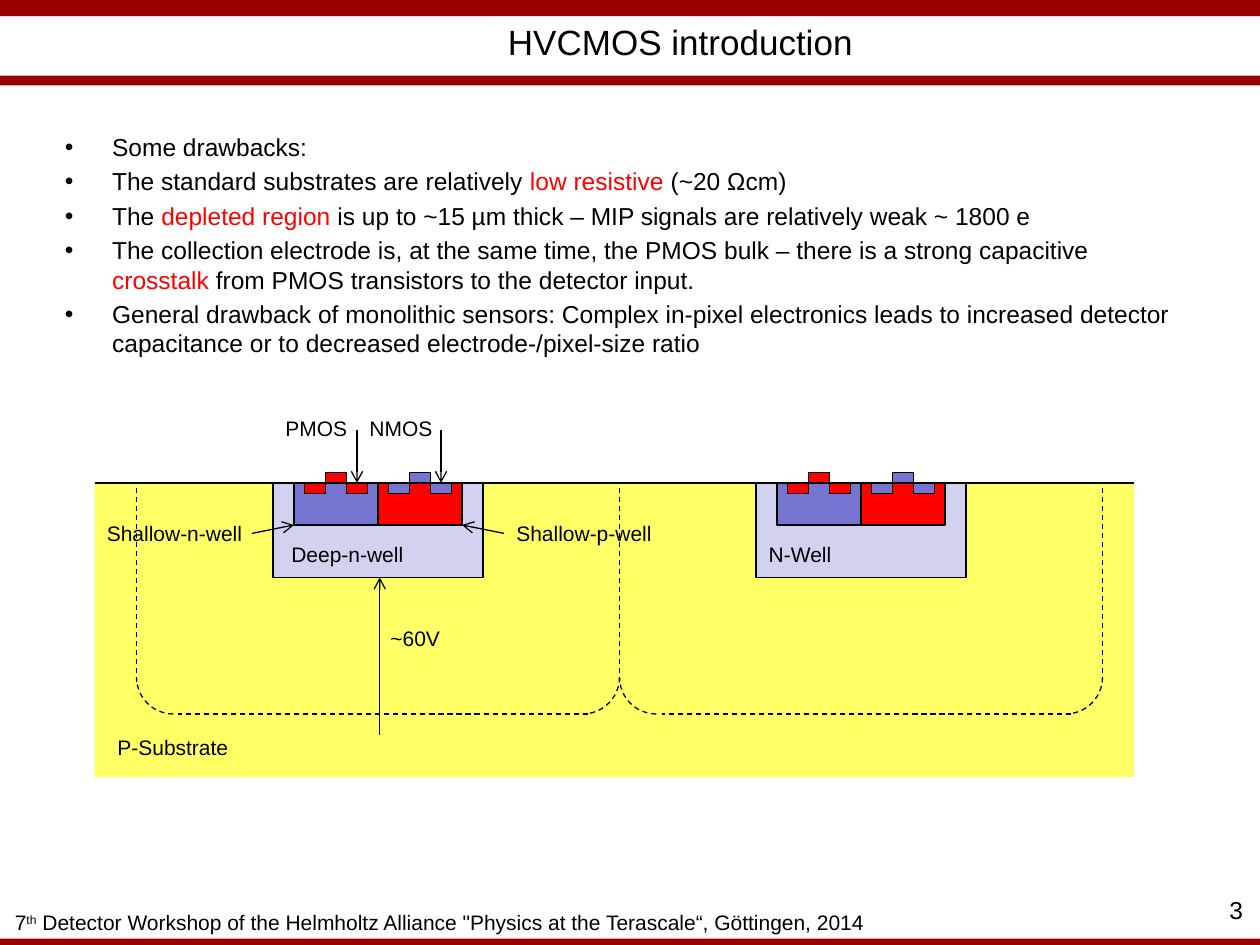
import pptx
import pptx.dml.color
import pptx.enum.dml
import pptx.enum.shapes
import pptx.enum.text
import pptx.oxml
import pptx.util

Pt = pptx.util.Pt
SHAPE = pptx.enum.shapes.MSO_SHAPE
ALIGN = pptx.enum.text.PP_ALIGN
ANCHOR = pptx.enum.text.MSO_ANCHOR
DASH = pptx.enum.dml.MSO_LINE.DASH
A = "http://schemas.openxmlformats.org/drawingml/2006/main"
COLORS = {
    "bar": "990000", "substrate": "FFFF66", "well": "D1D1F0",
    "n": "7575D1", "p": "FF0000", "mark": "FF0000", "ink": "000000",
}
BULLETS = [
    [("Some drawbacks:", "ink")],
    [("The standard substrates are relatively ", "ink"), ("low resistive ", "mark"),
     ("(~20 Ωcm)", "ink")],
    [("The ", "ink"), ("depleted region ", "mark"),
     ("is up to ~15 µm thick – MIP signals are relatively weak ~ 1800 e", "ink")],
    [("The collection electrode is, at the same time, the PMOS bulk – "
      "there is a strong capacitive ", "ink"), ("crosstalk", "mark"),
     (" from PMOS transistors to the detector input.", "ink")],
    [("General drawback of monolithic sensors: Complex in-pixel electronics leads to "
      "increased detector capacitance or to decreased electrode-/pixel-size ratio", "ink")],
]


def rgb(name):
    return pptx.dml.color.RGBColor.from_string(COLORS[name])


def apply(obj, fmt):
    for key, value in fmt.items():
        setattr(obj, key, value)


def child(parent, tag, **attrs):
    el = pptx.oxml.parse_xml(f'<a:{tag} xmlns:a="{A}"/>')
    for key, value in attrs.items():
        el.set(key, value)
    parent.append(el)


def outline(line, dash=None):
    line.color.rgb = rgb("ink")
    apply(line, {"width": Pt(0.75), "dash_style": dash})


def add_rect(shapes, box, fill, lined=True):
    sp = shapes.add_shape(SHAPE.RECTANGLE, *map(Pt, box))
    sp.shadow.inherit = False
    sp.fill.solid()
    sp.fill.fore_color.rgb = rgb(fill)
    if lined:
        outline(sp.line)
    else:
        sp.line.fill.background()


def add_corner(s, box, turn):
    sp = s.shapes.add_shape(SHAPE.ARC, *map(Pt, box))
    sp.shadow.inherit = False
    sp.fill.background()
    sp.rotation = turn
    outline(sp.line, DASH)


def add_line(s, x1, y1, x2, y2, dash=None, arrow=False):
    cx = s.shapes.add_connector(
        pptx.enum.shapes.MSO_CONNECTOR.STRAIGHT, *map(Pt, (x1, y1, x2, y2)))
    outline(cx.line, dash)
    if arrow:
        child(cx.line._get_or_add_ln(), "tailEnd", type="arrow")
    child(cx._element.spPr, "effectLst")


def add_run(p, text, size, color="ink"):
    r = p.add_run()
    r.text = text
    apply(r.font, {"name": "Arial", "size": Pt(size)})
    r.font.color.rgb = rgb(color)
    return r


def add_box(s, box, **fmt):
    tf = s.shapes.add_textbox(*map(Pt, box)).text_frame
    apply(tf, {"word_wrap": True, **fmt})
    return tf


def add_label(s, box, text, size=12, align=ALIGN.LEFT, **fmt):
    p = add_box(s, box, **fmt).paragraphs[0]
    p.alignment = align
    add_run(p, text, size)
    return p


def add_frame(s, box):
    x, y, w, h = box
    for top, height in ((y, 9.2), (y + 43.2, 5.6), (y + h - 3.6, 3.6)):
        add_rect(s.shapes, (x, top, w, height), "bar", lined=False)
    p = add_label(s, (x + 1.4, y + h - 23.8, 508, 21.6), "7", word_wrap=False)
    add_run(p, "th", 12).font._element.set("baseline", "30000")
    add_run(p, ' Detector Workshop of the Helmholtz Alliance "Physics at the '
               'Terascale“, Göttingen, 2014', 12)
    add_label(s, (x + w - 65, y + h - 32, 62.4, 24), "3", 14, ALIGN.RIGHT)


def add_title(s, box):
    add_label(s, box, "HVCMOS introduction", 20, ALIGN.CENTER,
              vertical_anchor=ANCHOR.MIDDLE)


def add_bullets(s, box):
    tf = add_box(s, box)
    for i, runs in enumerate(BULLETS):
        p = tf.add_paragraph() if i else tf.paragraphs[0]
        p.space_before = Pt(2.8 if i else 0)
        pPr = p._p.get_or_add_pPr()
        pPr.set("marL", str(Pt(27)))
        pPr.set("indent", str(Pt(-27)))
        child(pPr, "buFont", typeface="Arial")
        child(pPr, "buChar", char="•")
        for text, color in runs:
            add_run(p, text, 14, color)


def add_transistor(s, x, y, fill):
    group = s.shapes.add_group_shape()
    for dx, dy in ((0, 0), (24, 0), (12, -6)):
        add_rect(group.shapes, (x + dx, y + dy, 12, 6), fill)


def add_pixel(s, box):
    x, y, w, h = box
    left, bottom, arc = x + 78, y + h, 42
    add_rect(s.shapes, (left, y, 120, 54), "well")
    for i, (well, device) in enumerate((("n", "p"), ("p", "n"))):
        add_rect(s.shapes, (left + 12 + 48 * i, y, 48, 24), well)
        add_transistor(s, left + 18 + 48 * i, y, device)
    for side, corner, turn in ((x, x, 180), (x + w, x + w - arc, 90)):
        add_corner(s, (corner, bottom - arc, arc, arc), turn)
        add_line(s, side, bottom - 18, side, y, DASH)
    add_line(s, x + w - 18, bottom, x + 24, bottom, DASH)


def add_cross_section(s, box):
    x, y, w, h = box
    add_rect(s.shapes, box, "substrate", lined=False)
    add_line(s, x, y, x + w, y)
    for i in range(2):
        add_pixel(s, (x + 24 + 276 * i, y, 276, 132))
    labels = [
        ("PMOS", 102, -42, 54), ("NMOS", 150, -42, 54),
        ("Deep-n-well", 105.4, 30, 90), ("N-Well", 378.2, 30, 54),
        ("Shallow-n-well", 0, 18, 100), ("Shallow-p-well", 234, 18, 100),
        ("~60V", 162, 78, 48), ("P-Substrate", 6, 140, 84),
    ]
    for text, dx, dy, width in labels:
        add_label(s, (x + dx, y + dy, width, 21.6), text)
    arrows = [
        (150, -30, 150, 0), (198, -30, 198, 0),
        (90, 28.8, 114, 24), (234, 28.8, 210, 24), (163, 144, 163, 54),
    ]
    for x1, y1, x2, y2 in arrows:
        add_line(s, x + x1, y + y1, x + x2, y + y2, arrow=True)


def main():
    prs = pptx.Presentation()
    apply(prs, {"slide_width": Pt(720), "slide_height": Pt(540)})
    s = prs.slides.add_slide(prs.slide_layouts[6])
    add_frame(s, (0, 0, 720, 540))
    add_title(s, (93.6, 10.2, 590.4, 27.4))
    add_bullets(s, (30, 72, 648, 138))
    add_cross_section(s, (54, 276, 594, 168))
    prs.save("out.pptx")


if __name__ == "__main__":
    main()
